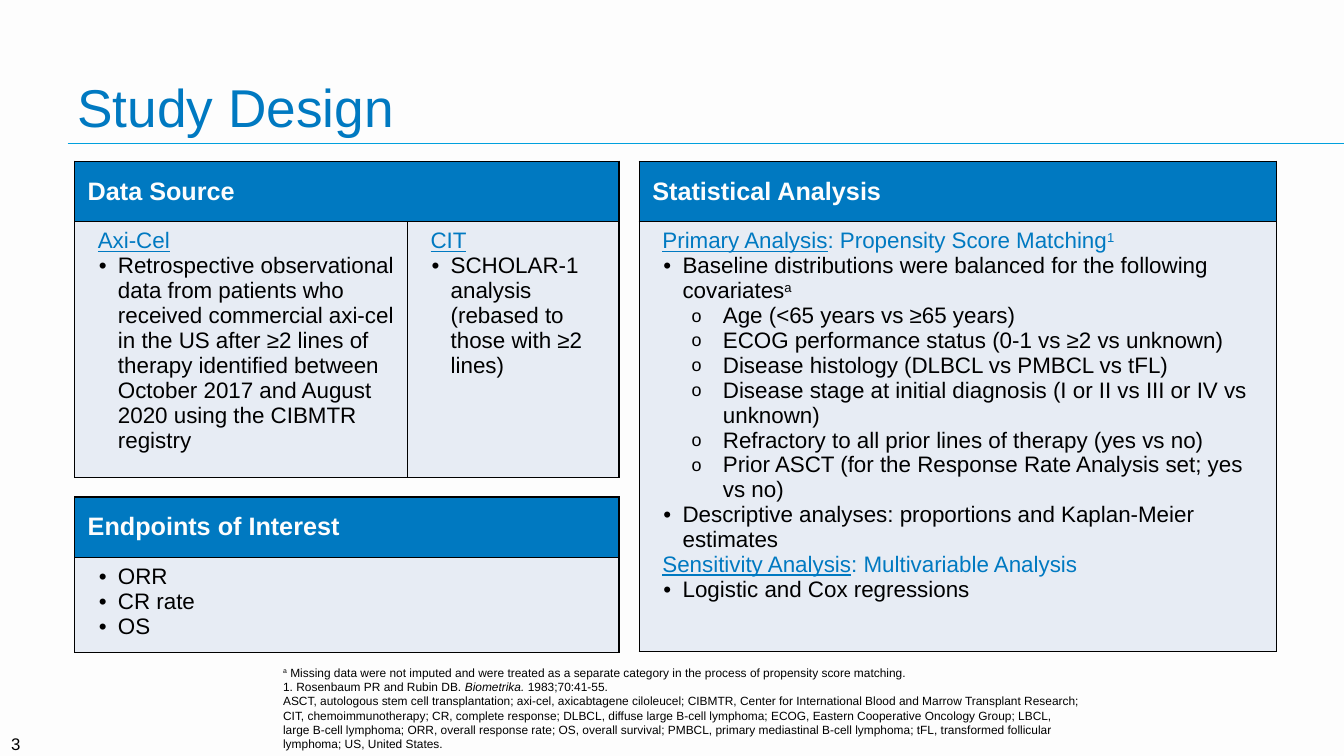
import dataclasses

import lxml.etree
import pptx
import pptx.dml.color
import pptx.enum.shapes
import pptx.enum.text
import pptx.oxml.ns
import pptx.util

ANCHOR = pptx.enum.text.MSO_ANCHOR
ALIGN = pptx.enum.text.PP_ALIGN
PX = 9144  # 100 px to the inch


@dataclasses.dataclass(frozen=True)
class Theme:
    font: str = "Arial"
    background: str = "FDFDFD"
    blue: str = "0079C1"
    rule: str = "00A0DD"
    panel: str = "E7ECF4"
    ink: str = "000000"
    title_size: float = 38
    header_size: float = 18
    body_size: float = 16
    number_size: float = 12
    note_size: float = 8.5


THEME = Theme()


def px(count):
    return pptx.util.Emu(count * PX)


def rgb(value):
    return pptx.dml.color.RGBColor.from_string(value)


def add_xml(parent, tag, **attributes):
    return lxml.etree.SubElement(parent, pptx.oxml.ns.qn(tag), attributes)


# Paragraph kinds: left margin and first-line indent in px, bullet, bullet size
KINDS = {
    "plain": (0, 0, None, None),
    "heading": (10, 0, None, None),
    "bullet": (30, -19, "•", None),
    "sub": (70, -31, "o", "80000"),
}


class SlideBuilder:
    def __init__(self, deck, theme):
        self.theme = theme
        self.page = deck.slides.add_slide(deck.slide_layouts[6])
        fill = self.page.background.fill
        fill.solid()
        fill.fore_color.rgb = rgb(theme.background)

    def fill_text(self, frame, paras, size, color, bold=False, align=ALIGN.LEFT):
        """Each para is (kind, spans); each span is text or (text, format)."""
        for index, (kind, spans) in enumerate(paras):
            para = frame.paragraphs[0] if index == 0 else frame.add_paragraph()
            para.alignment = align
            self.indent(para, kind)
            for item in spans:
                text, extra = (item, {}) if isinstance(item, str) else item
                span = para.add_run()
                span.text = text
                style = {"name": self.theme.font, "size": pptx.util.Pt(size),
                         "bold": bold, **extra}
                tint = self.theme.blue if kind == "heading" else color
                raised = style.pop("raised", False)
                for name, value in style.items():
                    setattr(span.font, name, value)
                span.font.color.rgb = rgb(tint)
                if raised:
                    span._r.get_or_add_rPr().set("baseline", "30000")

    def indent(self, para, kind):
        margin, first, bullet, bullet_size = KINDS[kind]
        props = para._p.get_or_add_pPr()
        props.set("marL", str(margin * PX))
        props.set("indent", str(first * PX))
        if bullet:
            add_xml(add_xml(props, "a:buClr"), "a:srgbClr", val=self.theme.ink)
            if bullet_size:
                add_xml(props, "a:buSzPct", val=bullet_size)
            add_xml(props, "a:buFont", typeface=self.theme.font)
            add_xml(props, "a:buChar", char=bullet)

    def text(self, area, paras, size, color, anchor, align=ALIGN.LEFT):
        box = self.page.shapes.add_textbox(*map(px, area))
        frame = box.text_frame
        frame.word_wrap = True
        frame.vertical_anchor = anchor
        self.fill_text(frame, paras, size, color, align=align)

    def line(self, left, top, right):
        rule = self.page.shapes.add_connector(
            pptx.enum.shapes.MSO_CONNECTOR.STRAIGHT, px(left), px(top), px(right), px(top))
        rule.line.color.rgb = rgb(self.theme.rule)
        rule.line.width = pptx.util.Pt(0.75)
        add_xml(rule._element.spPr, "a:effectLst")

    def panel(self, left, top, widths, heights, header, bodies):
        """A table with one header across and one body cell per column."""
        theme = self.theme
        table = self.page.shapes.add_table(
            2, len(widths), px(left), px(top), px(sum(widths)), px(sum(heights))).table
        table.horz_banding = False
        for column, width in zip(table.columns, widths):
            column.width = px(width)
        for row, height in zip(table.rows, heights):
            row.height = px(height)
        for column, body in enumerate(bodies):
            self.cell(table.cell(0, column), theme.blue, ANCHOR.MIDDLE)
            self.cell(table.cell(1, column), theme.panel, ANCHOR.TOP)
            self.fill_text(table.cell(1, column).text_frame, body,
                           theme.body_size, theme.ink)
        if len(widths) > 1:
            table.cell(0, 0).merge(table.cell(0, len(widths) - 1))
        self.fill_text(table.cell(0, 0).text_frame, [("plain", [header])],
                       theme.header_size, theme.background, bold=True)

    def cell(self, cell, color, anchor):
        style = {"margin_left": px(13), "margin_right": px(13), "margin_top": px(7),
                 "margin_bottom": px(7), "vertical_anchor": anchor}
        for name, value in style.items():
            setattr(cell, name, value)
        props = cell._tc.get_or_add_tcPr()
        for side in ("L", "R", "T", "B"):
            border = add_xml(props, f"a:ln{side}", w=str(pptx.util.Pt(1)))
            add_xml(add_xml(border, "a:solidFill"), "a:srgbClr", val=self.theme.ink)
        cell.fill.solid()
        cell.fill.fore_color.rgb = rgb(color)
        # The fill must follow the borders
        props.append(props.find(pptx.oxml.ns.qn("a:solidFill")))


UNDERLINE = {"underline": True}
RAISED = {"raised": True}


def lines(*texts, kind="bullet"):
    return [(kind, [text]) for text in texts]


def heading(*spans):
    """The first span is underlined."""
    return ("heading", [(spans[0], UNDERLINE), *spans[1:]])


AXI_CEL = [heading("Axi-Cel")] + lines(
    "Retrospective observational data from patients who received commercial axi-cel "
    "in the US after ≥2 lines of therapy identified between October 2017 and "
    "August 2020 using the CIBMTR registry")
CIT = [heading("CIT")] + lines("SCHOLAR-1 analysis (rebased to those with ≥2 lines)")
ENDPOINTS = lines("ORR", "CR rate", "OS")
ANALYSIS = [
    heading("Primary Analysis", ": Propensity Score Matching", ("1", RAISED)),
    ("bullet", ["Baseline distributions were balanced for the following covariates",
                ("a", RAISED)]),
    *lines("Age (<65 years vs ≥65 years)",
           "ECOG performance status (0-1 vs ≥2 vs unknown)",
           "Disease histology (DLBCL vs PMBCL vs tFL)",
           "Disease stage at initial diagnosis (I or II vs III or IV vs unknown)",
           "Refractory to all prior lines of therapy (yes vs no)",
           "Prior ASCT (for the Response Rate Analysis set; yes vs no)", kind="sub"),
    *lines("Descriptive analyses: proportions and Kaplan-Meier estimates"),
    heading("Sensitivity Analysis", ": Multivariable Analysis"),
    *lines("Logistic and Cox regressions"),
]
NOTES = [
    ("plain", [("a", RAISED), " Missing data were not imputed and were treated as a "
               "separate category in the process of propensity score matching."]),
    ("plain", ["1. Rosenbaum PR and Rubin DB. ", ("Biometrika. ", {"italic": True}),
               "1983;70:41-55."]),
    ("plain", ["ASCT, autologous stem cell transplantation; axi-cel, axicabtagene "
               "ciloleucel; CIBMTR, Center for International Blood and Marrow Transplant "
               "Research; CIT, chemoimmunotherapy; CR, complete response; DLBCL, diffuse "
               "large B-cell lymphoma; ECOG, Eastern Cooperative Oncology Group; LBCL, "
               "large B-cell lymphoma; ORR, overall response rate; OS, overall survival; "
               "PMBCL, primary mediastinal B-cell lymphoma; tFL, transformed follicular "
               "lymphoma; US, United States."]),
]


def main():
    deck = pptx.Presentation()
    deck.slide_width, deck.slide_height = px(1333), px(750)
    slide = SlideBuilder(deck, THEME)

    # Title, rule and slide number
    slide.line(67, 142, 1333)
    slide.text((-37, 718, 67, 40), lines("3", kind="plain"), THEME.number_size,
               THEME.ink, ANCHOR.MIDDLE, ALIGN.RIGHT)
    slide.text((67, 17, 1200, 125), lines("Study Design", kind="plain"),
               THEME.title_size, THEME.blue, ANCHOR.BOTTOM)

    # Footnotes
    slide.text((271, 652, 810, 98), NOTES, THEME.note_size, THEME.ink, ANCHOR.BOTTOM)

    # Panels
    slide.panel(74, 160, [330, 210], [60, 236], "Data Source", [AXI_CEL, CIT])
    slide.panel(74, 493, [540], [60, 90], "Endpoints of Interest", [ENDPOINTS])
    slide.panel(634, 160, [632], [60, 426], "Statistical Analysis", [ANALYSIS])

    deck.save("out.pptx")


if __name__ == "__main__":
    main()
